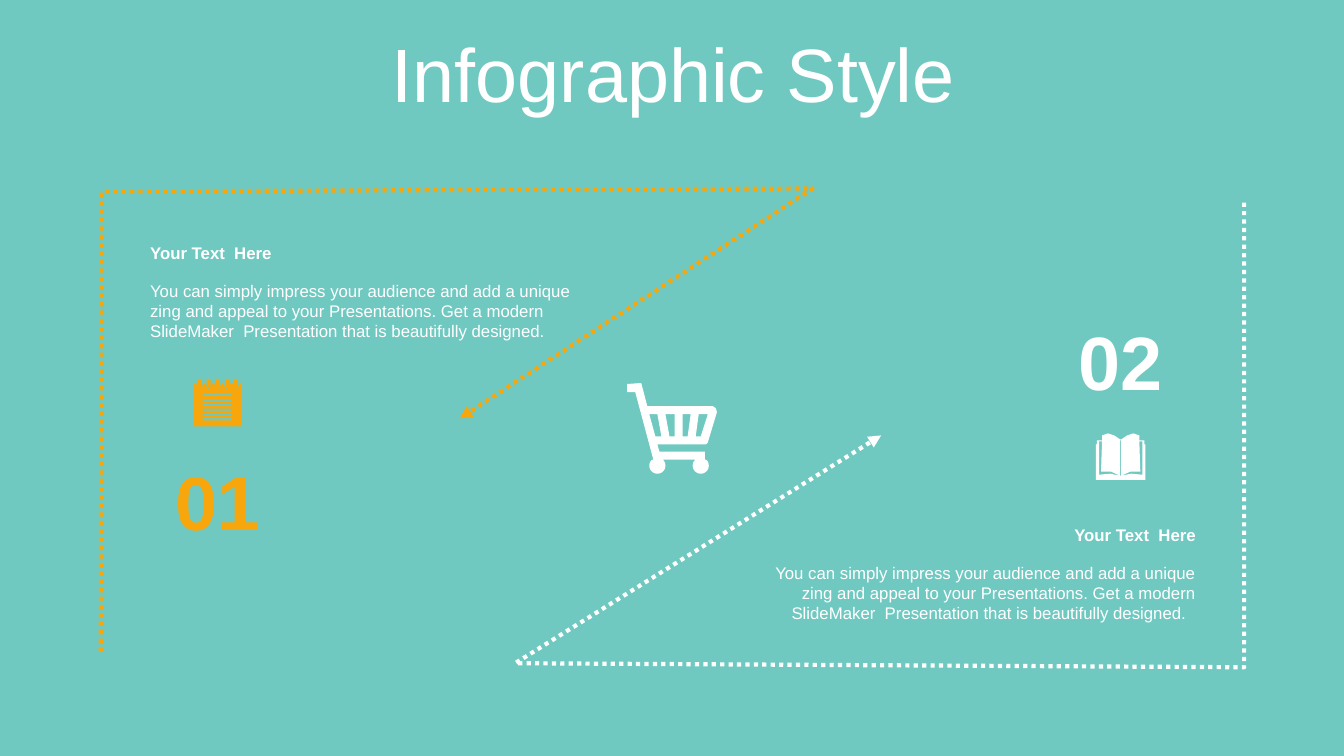
import math
from dataclasses import dataclass

from lxml import etree
from pptx import Presentation
from pptx import util as u
from pptx.dml.color import RGBColor
from pptx.enum import dml, text
from pptx.oxml.ns import qn


@dataclass(frozen=True)
class Theme:
    background: RGBColor = RGBColor(0x6F, 0xC9, 0xC1)
    white: RGBColor = RGBColor(0xFF, 0xFF, 0xFF)
    orange: RGBColor = RGBColor(0xF7, 0xA6, 0x0B)
    font: str = "Arial"
    display_size: int = 54
    text_size: int = 12
    line_width: int = 3


THEME = Theme()
LEFT, CENTER, RIGHT = text.PP_ALIGN.LEFT, text.PP_ALIGN.CENTER, text.PP_ALIGN.RIGHT
TOP, MIDDLE = text.MSO_ANCHOR.TOP, text.MSO_ANCHOR.MIDDLE
HEADING = "Your Text  Here"
BODY = ("You can simply impress your audience and add a unique zing and appeal to your "
        "Presentations. Get a modern SlideMaker  Presentation that is beautifully designed.")


def write(shape, words, size, color, align, anchor=TOP, bold=False):
    frame = shape.text_frame
    frame.text = words
    frame.word_wrap = True
    frame.auto_size = text.MSO_AUTO_SIZE.SHAPE_TO_FIT_TEXT
    frame.vertical_anchor = anchor
    paragraph = frame.paragraphs[0]
    paragraph.alignment = align
    font = paragraph.runs[0].font
    font.name, font.size, font.bold = THEME.font, u.Pt(size), bold
    font.color.rgb = color
    return paragraph


def add_title(slide, words):
    title = slide.shapes.title
    title.left, title.top = u.Inches(0.35), u.Inches(0.31)
    title.width, title.height = u.Inches(12.66), u.Inches(0.92)
    paragraph = write(title, words, THEME.display_size, THEME.white, CENTER, MIDDLE)
    paragraph.line_spacing = 0.9
    paragraph.space_before = u.Pt(10)


def add_number(slide, left, top, words, color):
    box = slide.shapes.add_textbox(*map(u.Inches, (left, top, 1.22, 1.01)))
    write(box, words, THEME.display_size, color, CENTER, MIDDLE, bold=True)


def add_text_block(slide, left, top, width, body, align):
    """Group a bold heading with the body text below it."""
    group = slide.shapes.add_group_shape()
    for words, offset, height, bold in ((body, 0.375, 0.71, False), (HEADING, 0, 0.3, True)):
        box = group.shapes.add_textbox(*map(u.Inches, (left, top + offset, width, height)))
        write(box, words, THEME.text_size, THEME.white, align, bold=bold)


def add_outline(slide, contours, closed=True):
    """Draw one freeform; a contour inside another becomes a hole."""
    contours = [[(u.Inches(x), u.Inches(y)) for x, y in contour] for contour in contours]
    builder = slide.shapes.build_freeform(*contours[0][0])
    for index, contour in enumerate(contours):
        if index:
            builder.move_to(*contour[0])
        builder.add_line_segments(contour[1:], close=closed)
    shape = builder.convert_to_shape()
    shape.shadow.inherit = False
    return shape


def add_icon(slide, contours, color):
    icon = add_outline(slide, contours)
    icon.fill.solid()
    icon.fill.fore_color.rgb = color
    icon.line.fill.background()


def add_dotted_arrow(slide, points, color):
    arrow = add_outline(slide, [points], closed=False)
    arrow.fill.background()
    arrow.line.color.rgb = color
    arrow.line.width = u.Pt(THEME.line_width)
    arrow.line.dash_style = dml.MSO_LINE.ROUND_DOT
    line = arrow.line.fill._xPr
    etree.SubElement(line, qn("a:tailEnd"), type="triangle")


def rectangle(left, top, right, bottom):
    return [(left, top), (right, top), (right, bottom), (left, bottom)]


def circle(x, y, radius, steps=32):
    angles = [2 * math.pi * step / steps for step in range(steps)]
    return [(x + radius * math.cos(a), y + radius * math.sin(a)) for a in angles]


def cart_contours():
    frame = [(6.22, 3.81), (6.36, 3.8), (6.42, 4.03), (7.07, 4.03), (7.1, 4.05),
             (7.11, 4.09), (7.02, 4.39), (7, 4.41), (6.52, 4.41), (6.54, 4.48),
             (6.99, 4.48), (6.99, 4.56), (6.48, 4.56), (6.3, 3.89), (6.22, 3.89)]
    # Each gap: top left, top right, bottom right, bottom left
    gaps = [(6.44, 6.52, 6.56, 6.5), (6.6, 6.69, 6.69, 6.64),
            (6.77, 6.85, 6.82, 6.77), (6.93, 7.02, 6.95, 6.9)]
    baskets = [list(zip(gap, (4.11, 4.11, 4.33, 4.33))) for gap in gaps]
    # Wheels are cut off where they meet the frame
    wheels = [[(px, max(py, 4.56)) for px, py in circle(x, 4.62, 0.08)] for x in (6.52, 6.95)]
    return [frame, *baskets, *wheels]


def notepad_contours():
    slots = [1.95 + 0.09 * i for i in range(5)]
    page = [(1.92, 3.8)]
    for x in slots:
        page += [(x, 3.8), (x, 3.83), (x + 0.03, 3.86), (x + 0.06, 3.83), (x + 0.06, 3.8)]
    page += [(2.39, 3.8), (2.39, 4.23), (1.92, 4.23)]
    rings = [rectangle(x + 0.01, 3.76, x + 0.05, 3.84) for x in slots]
    rows = [3.91 + 0.048 * i for i in range(6)]
    return [page, *rings, *[rectangle(2.01, y, 2.3, y + 0.02) for y in rows]]


def book_contours():
    def mirror(points):
        return [(22.23 - x, y) for x, y in reversed(points)]

    cover = [(11.11, 4.36), (11.05, 4.32), (10.99, 4.3), (10.93, 4.32), (10.93, 4.37),
             (10.88, 4.37), (10.88, 4.41), (10.87, 4.41), (10.87, 4.76)]
    gutter = [(10.9, 4.38), (10.93, 4.38), (10.92, 4.68), (11.02, 4.68),
              (11.11, 4.72), (11.01, 4.7), (10.9, 4.71)]
    fold = rectangle(11.11, 4.37, 11.12, 4.72)
    return [cover + mirror(cover), gutter, mirror(gutter), fold]


def main():
    presentation = Presentation()
    presentation.slide_width, presentation.slide_height = u.Inches(13.33), u.Inches(7.5)
    slide = presentation.slides.add_slide(presentation.slide_layouts[5])
    slide.background.fill.solid()
    slide.background.fill.fore_color.rgb = THEME.background

    add_title(slide, "Infographic Style")
    add_dotted_arrow(slide, [(1, 6.46), (1.01, 1.9), (8.06, 1.87), (4.56, 4.15)], THEME.orange)
    add_dotted_arrow(slide, [(12.34, 2.01), (12.34, 6.62), (5.11, 6.58), (8.74, 4.32)],
                     THEME.white)
    add_number(slide, 1.55, 4.46, "01", THEME.orange)
    add_number(slide, 10.5, 3.07, "02", THEME.white)
    add_text_block(slide, 1.39, 2.36, 4.49, BODY, LEFT)
    add_text_block(slide, 7.51, 5.16, 4.45, BODY + "  ", RIGHT)
    add_icon(slide, cart_contours(), THEME.white)
    add_icon(slide, notepad_contours(), THEME.orange)
    add_icon(slide, book_contours(), THEME.white)

    presentation.save("out.pptx")


if __name__ == "__main__":
    main()
